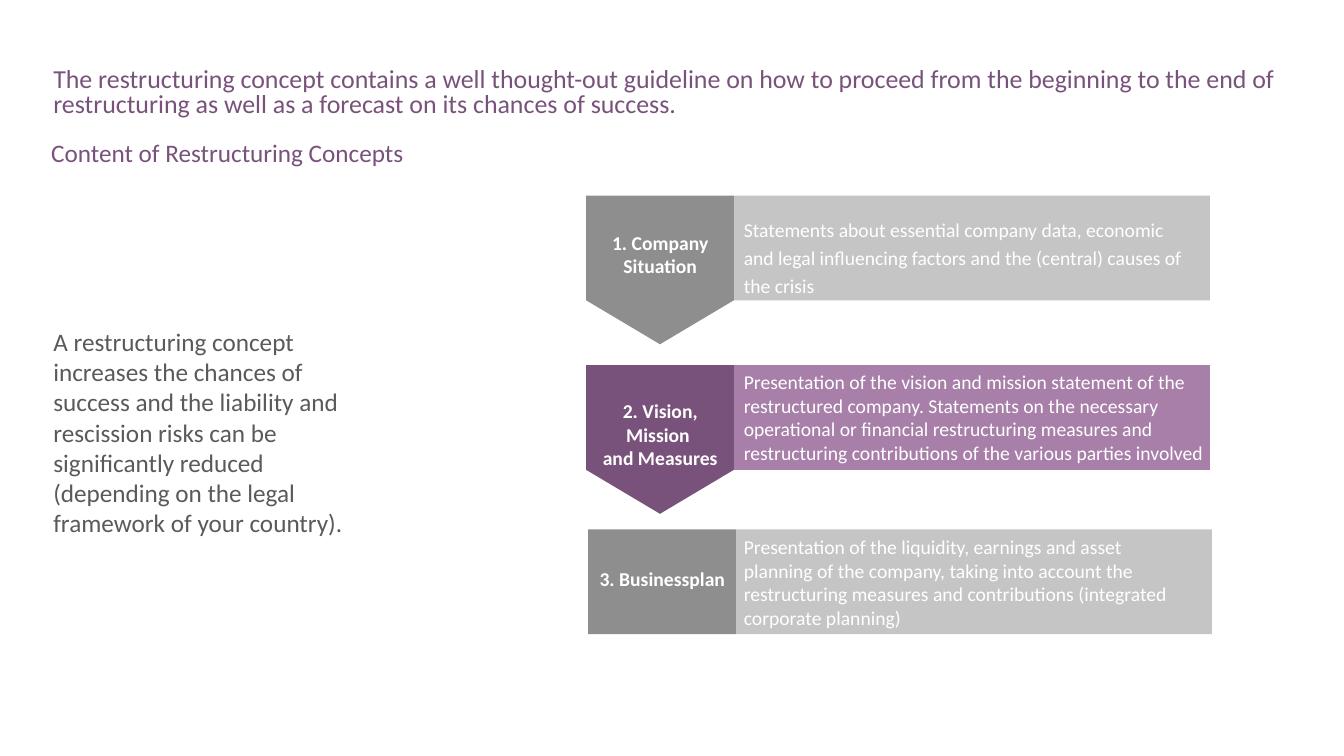
from lxml import etree
from pptx import Presentation
from pptx.dml.color import RGBColor
from pptx.enum import shapes, text
from pptx.oxml import ns
from pptx.util import Pt

WHITE = RGBColor(0xFF, 0xFF, 0xFF)
INK = RGBColor(0x59, 0x5A, 0x59)
PLUM = RGBColor(0x79, 0x52, 0x7B)
LILAC = RGBColor(0xA7, 0x7F, 0xA9)
GREY = RGBColor(0x8E, 0x8E, 0x8E)
SILVER = RGBColor(0xC5, 0xC5, 0xC5)

WIDE, HIGH, TIP = 105.5, 74.8, 31.4


def write(frame, words, size=14, color=WHITE, bold=False, align=None,
          space=None, count=False, anchor=text.MSO_ANCHOR.TOP, font="Calibri"):
    frame.word_wrap = True
    frame.vertical_anchor = anchor
    para = frame.paragraphs[0]
    para.text = words
    para.alignment = align
    para.line_spacing = space
    if count:
        props = para._p.get_or_add_pPr()
        props.set("marL", "0")
        props.set("indent", str(-Pt(7.2)))
        mark = etree.SubElement(props, ns.qn("a:buAutoNum"))
        mark.set("type", "arabicPeriod")
    for run in para.runs:
        run.font.name = font
        run.font.size = Pt(size)
        run.font.bold = bold
        run.font.color.rgb = color


class Deck:
    def __init__(self, slide, font):
        self.shapes = slide.shapes
        self.font = font

    def paint(self, shape, color):
        shape.shadow.inherit = False
        shape.fill.solid()
        shape.fill.fore_color.rgb = color
        shape.line.fill.background()

    def label(self, words, x, y, w, h, **style):
        box = self.shapes.add_textbox(Pt(x), Pt(y), Pt(w), Pt(h))
        write(box.text_frame, words, font=self.font, **style)

    def block(self, x, y, w, h, color):
        kind = shapes.MSO_SHAPE.RECTANGLE
        box = self.shapes.add_shape(kind, Pt(x), Pt(y), Pt(w), Pt(h))
        self.paint(box, color)

    def arrow(self, x, y, color):
        base = y + HIGH
        spots = [(x + WIDE, y), (x + WIDE, base),
                 (x + WIDE / 2, base + TIP), (x, base)]
        form = self.shapes.build_freeform(Pt(x), Pt(y))
        form.add_line_segments([(Pt(a), Pt(b)) for a, b in spots])
        self.paint(form.convert_to_shape(), color)


def main():
    prs = Presentation()
    prs.slide_width, prs.slide_height = Pt(960), Pt(540)
    deck = Deck(prs.slides.add_slide(prs.slide_layouts[6]), "Calibri")

    deck.label("A restructuring concept increases the chances of success and "
               "the liability and rescission risks can be significantly "
               "reduced (depending on the legal framework of your country).",
               31, 129, 251, 359, size=18, color=INK,
               anchor=text.MSO_ANCHOR.MIDDLE)
    deck.label("The restructuring concept contains a well thought-out "
               "guideline on how to proceed from the beginning to the end of "
               "restructuring as well as a forecast on its chances of success.",
               31, 45.4, 903, 46, size=18.5, color=PLUM, space=0.8)
    deck.label("Content of Restructuring Concepts", 29.5, 97.2, 904, 20,
               size=18, color=PLUM, space=0.9)

    rows = [
        (418.7, 139.7, GREY, SILVER, " Company Situation", 21.5, True,
         "Statements about essential company data, economic and legal "
         "influencing factors and the (central) causes of the crisis",
         9.4, 332.6, 1.19),
        (418.7, 260.8, PLUM, LILAC, "2. Vision, Mission \vand Measures",
         20.8, False,
         "Presentation of the vision and mission statement of the "
         "restructured company. Statements on the necessary operational or "
         "financial restructuring measures and restructuring contributions "
         "of the various parties involved", 0, 353.5, None),
        (420.2, 378.2, GREY, SILVER, "3. Businessplan", 23, False,
         "Presentation of the liquidity, earnings and asset planning of the "
         "company, taking into account the restructuring measures and "
         "contributions (integrated corporate planning)", 0.5, 332.6, None),
    ]
    for x, y, dark, pale, name, drop, count, body, shift, w, space in rows:
        deck.block(x + WIDE, y, 340, HIGH, pale)
        deck.label(body, 524.2, y + shift, w, HIGH - shift, space=space)
        if y == rows[-1][1]:
            deck.block(x, y, WIDE, HIGH, dark)
        else:
            deck.arrow(x, y, dark)
        deck.label(name, x - 4, y + drop, 113.8, HIGH - drop, bold=True,
                   align=text.PP_ALIGN.CENTER, count=count)

    prs.save("out.pptx")


if __name__ == "__main__":
    main()
